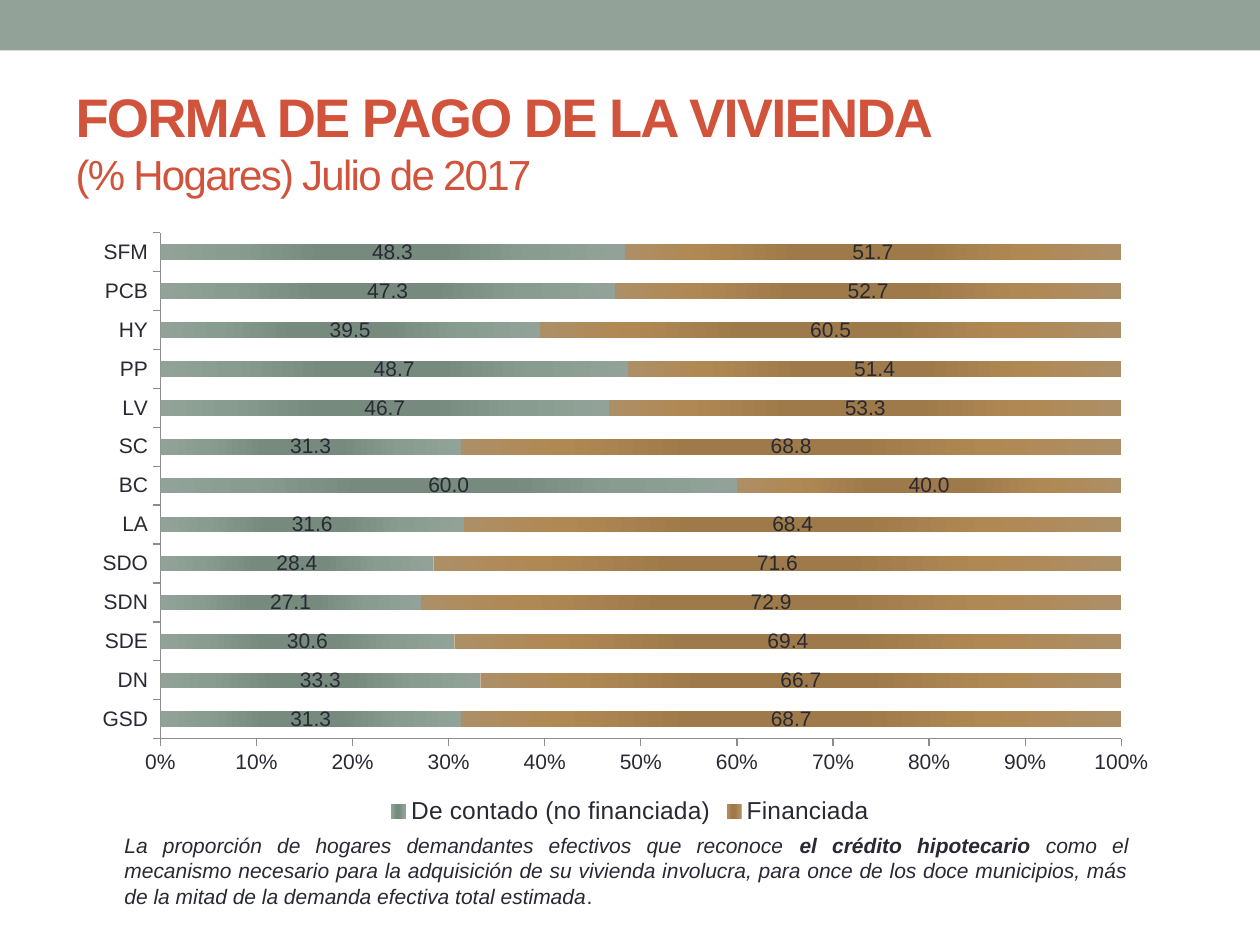
from dataclasses import dataclass

from lxml.etree import SubElement
from pptx import Presentation
from pptx.chart.data import CategoryChartData as Data
from pptx.dml.color import RGBColor as Rgb
from pptx.enum.chart import XL_CHART_TYPE as Kind
from pptx.enum.chart import XL_LEGEND_POSITION as Spot
from pptx.enum.chart import XL_TICK_MARK as Tick
from pptx.enum.shapes import MSO_SHAPE as Form
from pptx.enum.text import MSO_ANCHOR as Anchor
from pptx.enum.text import PP_ALIGN as Align
from pptx.oxml import parse_xml
from pptx.oxml.ns import nsdecls, qn
from pptx.util import Pt


@dataclass(frozen=True)
class Theme:
    face: str = "Arial"
    ink: str = "292934"
    red: str = "D2533C"
    sage: str = "93A299"
    gray: str = "8C8C8C"
    sage_tones: tuple = ("93A299", "889C90", "768A7E")
    tan_tones: tuple = ("AD8F67", "B08853", "9E7A4A")
    head: int = 31
    sub: int = 24
    key: int = 14
    text: int = 12


THEME = Theme()
TOWNS = ("GSD", "DN", "SDE", "SDN", "SDO", "LA", "BC", "SC", "LV", "PP", "HY", "PCB", "SFM")
SERIES = (
    ("De contado (no financiada)", THEME.sage_tones,
     (31.3, 33.3, 30.6, 27.1, 28.4, 31.6, 60, 31.3, 46.7, 48.7, 39.5, 47.3, 48.3)),
    ("Financiada", THEME.tan_tones,
     (68.7, 66.7, 69.4, 72.9, 71.6, 68.4, 40, 68.8, 53.3, 51.4, 60.5, 52.7, 51.7)),
)
NOTE = (
    ("La proporción de hogares demandantes efectivos que reconoce ", False, True),
    ("el crédito hipotecario", True, True),
    (" como el mecanismo necesario para la adquisición de su vivienda involucra, "
     "para once de los doce municipios, más de la mitad de la demanda efectiva total estimada",
     False, True),
    (".", False, False),
)


def box(*sides):
    return [Pt(side) for side in sides]


def style(font, size, tint):
    font.name = THEME.face
    font.size = Pt(size)
    font.color.rgb = Rgb.from_string(tint)


def add_band(slide):
    band = slide.shapes.add_shape(Form.RECTANGLE, *box(0, 0, 720, 28.8))
    band.shadow.inherit = False
    band.fill.solid()
    band.fill.fore_color.rgb = Rgb.from_string(THEME.sage)
    band.line.fill.background()


def add_title(slide):
    title = slide.shapes.title
    title.left, title.top, title.width, title.height = box(36, 41.8, 648, 77.8)
    frame = title.text_frame
    frame.vertical_anchor = Anchor.MIDDLE
    para = frame.paragraphs[0]
    para.alignment = Align.LEFT
    lines = (("FORMA DE PAGO DE LA VIVIENDA", THEME.head, True),
             ("(% Hogares) Julio de 2017", THEME.sub, False))
    for row, (text, size, bold) in enumerate(lines):
        if row:
            para.add_line_break()
        run = para.add_run()
        run.text = text
        style(run.font, size, THEME.red)
        run.font.bold = bold
        run.font._element.set("spc", "-100")


def shade(fill, tones):
    fill.gradient()
    fill.gradient_angle = 0
    stops = fill._xPr.find(qn("a:gradFill")).find(qn("a:gsLst"))
    for stop in list(stops):
        stops.remove(stop)
    edge, mid, core = tones
    marks = ((0, edge), (15, mid), (35, core), (60, core), (80, mid), (100, edge))
    for place, tint in marks:
        stop = SubElement(stops, qn("a:gs"), pos=str(place * 1000))
        SubElement(stop, qn("a:srgbClr"), val=tint)


def set_axis(axis):
    axis.has_major_gridlines = False
    axis.major_tick_mark = Tick.OUTSIDE
    axis.minor_tick_mark = Tick.NONE
    axis.format.line.color.rgb = Rgb.from_string(THEME.gray)
    style(axis.tick_labels.font, THEME.text, THEME.ink)


def set_plot(chart, left, top, width, height):
    area = chart._chartSpace.chart.plotArea
    for old in area.findall(qn("c:layout")):
        area.remove(old)
    area.insert(0, parse_xml(
        f'<c:layout {nsdecls("c")}><c:manualLayout><c:layoutTarget val="inner"/>'
        '<c:xMode val="edge"/><c:yMode val="edge"/>'
        f'<c:x val="{left}"/><c:y val="{top}"/><c:w val="{width}"/><c:h val="{height}"/>'
        '</c:manualLayout></c:layout>'))


def add_bars(slide):
    data = Data(number_format="0.0")
    data.categories = TOWNS
    for name, _, vals in SERIES:
        data.add_series(name, vals)
    chart = slide.shapes.add_chart(
        Kind.BAR_STACKED_100, *box(48, 126, 624, 348.5), data).chart
    style(chart.font, THEME.text, THEME.ink)
    chart.has_title = False
    chart.has_legend = True
    chart.legend.position = Spot.BOTTOM
    chart.legend.include_in_layout = False
    style(chart.legend.font, THEME.key, THEME.ink)
    set_axis(chart.category_axis)
    set_axis(chart.value_axis)
    chart.value_axis.major_unit = 0.1
    chart.value_axis.tick_labels.number_format = "0%"
    chart.value_axis.tick_labels.number_format_is_linked = False
    plot = chart.plots[0]
    plot.gap_width = 150
    plot.overlap = 100
    plot.vary_by_categories = False
    for bar, (_, tones, _) in zip(plot.series, SERIES):
        shade(bar.format.fill, tones)
        tags = bar.data_labels
        tags.show_value = True
        tags.number_format = "0.0"
        tags.number_format_is_linked = False
        style(tags.font, THEME.text, THEME.ink)
    set_plot(chart, 0.07, 0.02, 0.88, 0.83)


def add_note(slide):
    frame = slide.shapes.add_textbox(*box(64, 472.3, 588, 51)).text_frame
    frame.word_wrap = True
    para = frame.paragraphs[0]
    para.alignment = Align.JUSTIFY
    style(para.font, THEME.text, THEME.ink)
    for text, bold, slant in NOTE:
        run = para.add_run()
        run.text = text
        run.font.bold = bold
        run.font.italic = slant


def main():
    deck = Presentation()
    deck.slide_width, deck.slide_height = box(720, 540)
    slide = deck.slides.add_slide(deck.slide_layouts[5])
    add_band(slide)
    add_title(slide)
    add_bars(slide)
    add_note(slide)
    deck.save("out.pptx")


if __name__ == "__main__":
    main()
